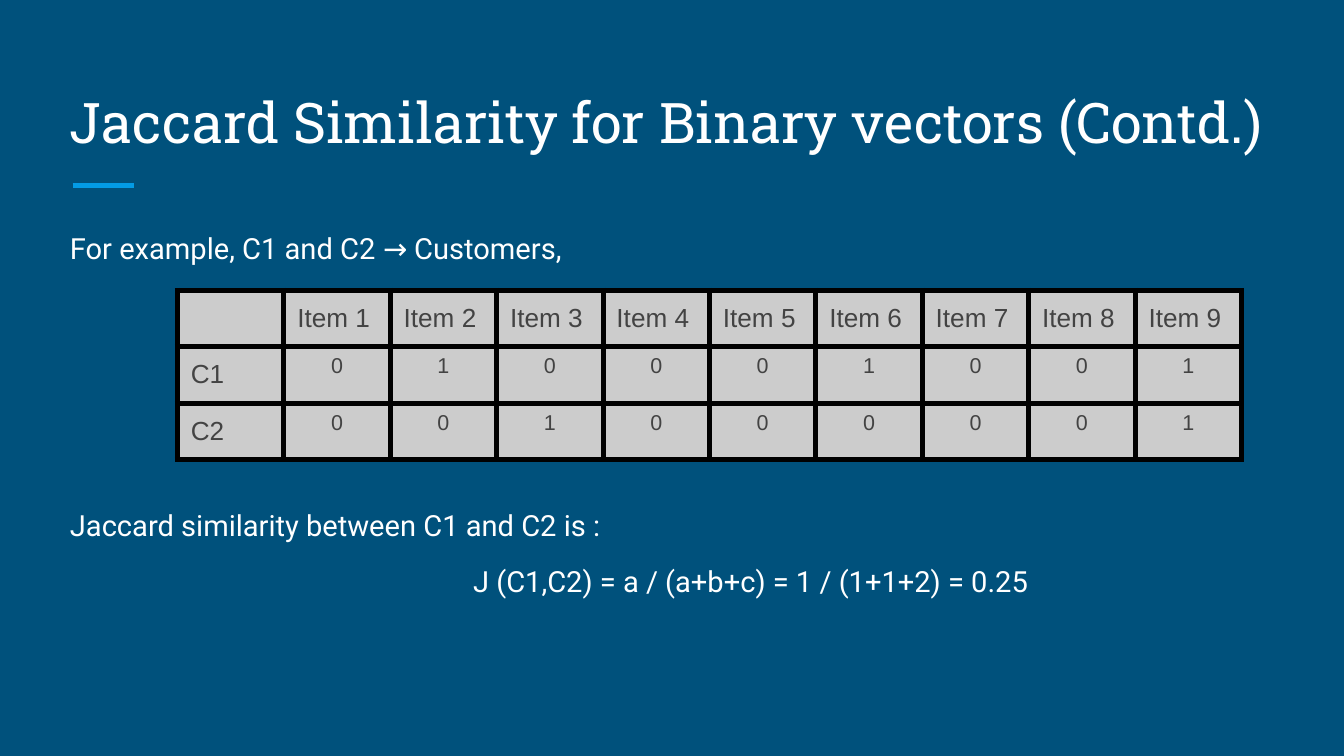
from lxml.etree import SubElement
from pptx import Presentation
from pptx.dml.color import RGBColor
from pptx.enum.text import MSO_ANCHOR, MSO_AUTO_SIZE, PP_ALIGN
from pptx.oxml.ns import qn
from pptx.util import Inches, Pt

# Content
TITLE = "Jaccard Similarity for Binary vectors (Contd.)"
# text, space before (pt), left indent (in)
LINES = [
    ("For example, C1 and C2 → Customers,", 0, 0),
    ("Jaccard similarity between C1 and C2 is :", 131, 0),
    ("J (C1,C2) = a / (a+b+c) = 1 / (1+1+2) = 0.25", 12, 3),
]
BUYS = {"C1": "010001001", "C2": "001000001"}
ITEMS = [f"Item {n}" for n in range(1, 10)]
ROWS = [["", *ITEMS]] + [[name, *bits] for name, bits in BUYS.items()]

# Theme
THEME = {
    "back": "00517C", "accent": "039BE5", "cell": "CCCCCC", "edge": "000000",
    "title": {"name": "Roboto Slab", "size": Pt(30), "color": "FFFFFF"},
    "body": {"name": "Roboto", "size": Pt(15.6), "color": "FFFFFF"},
    "label": {"name": "Arial", "size": Pt(14), "color": "434343"},
    "digit": {"name": "Arial", "size": Pt(11.5), "color": "434343"},
}
PAGE = 10
LEFT, WIDE = 0.42, 9.15
SPAN, ROW = 7.92, 0.42


def put(thing, **vals):
    for key, val in vals.items():
        setattr(thing, key, val)


def style(font, look):
    for key, val in THEME[look].items():
        if key == "color":
            font.color.rgb = RGBColor.from_string(val)
        else:
            setattr(font, key, val)


def pads(x, y):
    return {"margin_left": Inches(x), "margin_right": Inches(x),
            "margin_top": Inches(y), "margin_bottom": Inches(y)}


def place(shape, top, high, anchor):
    put(shape, left=Inches(LEFT), top=Inches(top),
        width=Inches(WIDE), height=Inches(high))
    put(shape.text_frame, word_wrap=True, auto_size=MSO_AUTO_SIZE.NONE,
        vertical_anchor=anchor, **pads(0.1, 0.1))


def edge(cell):
    props = cell._tc.get_or_add_tcPr()
    for side in ("lnL", "lnR", "lnT", "lnB"):
        line = SubElement(props, qn(f"a:{side}"), w=str(Pt(3)))
        fill = SubElement(line, qn("a:solidFill"))
        SubElement(fill, qn("a:srgbClr"), val=THEME["edge"])


# Widescreen page, 16:9
deck = Presentation()
put(deck, slide_width=Inches(PAGE), slide_height=Inches(PAGE * 9 / 16))
slide = deck.slides.add_slide(deck.slide_layouts[1])
back = slide.background.fill
back.solid()
back.fore_color.rgb = RGBColor.from_string(THEME["back"])

# Accent rule
rule = slide.shapes.add_connector(1, Inches(0.54), Inches(1.38), Inches(1), Inches(1.38))
rule.line.width = Pt(3)
rule.line.color.rgb = RGBColor.from_string(THEME["accent"])
SubElement(rule._element.spPr, qn("a:effectLst"))

# Title
title, body = slide.placeholders
place(title, 0.5, 0.75, MSO_ANCHOR.BOTTOM)
title.text_frame.text = TITLE
para = title.text_frame.paragraphs[0]
para.alignment = PP_ALIGN.LEFT
style(para.runs[0].font, "title")

# Body lines
place(body, 1.63, 3.84, MSO_ANCHOR.TOP)
body.text_frame.text = "\n".join(text for text, _, _ in LINES)
for para, (_, gap, left) in zip(body.text_frame.paragraphs, LINES):
    put(para, line_spacing=0.95, space_before=Pt(gap), alignment=PP_ALIGN.LEFT)
    props = para._p.get_or_add_pPr()
    props.set("marL", str(Inches(left)))
    props.set("indent", "0")
    SubElement(props, qn("a:buNone"))
    style(para.runs[0].font, "body")

# Purchase table
rows, cols = len(ROWS), len(ROWS[0])
grid = slide.shapes.add_table(rows, cols, Inches(1.32), Inches(2.16),
                              Inches(SPAN), Inches(ROW * rows)).table
put(grid, first_row=False, horz_banding=False)
for col in grid.columns:
    col.width = Inches(SPAN / cols)
for r, row in enumerate(ROWS):
    grid.rows[r].height = Inches(ROW)
    for c, text in enumerate(row):
        cell = grid.cell(r, c)
        edge(cell)
        cell.fill.solid()
        cell.fill.fore_color.rgb = RGBColor.from_string(THEME["cell"])
        if not text:
            continue
        cell.text = text
        para = cell.text_frame.paragraphs[0]
        digit = r > 0 and c > 0
        put(cell, **(pads(0.21, 0.05) if digit else pads(0.1, 0.1)))
        if digit:
            put(para, alignment=PP_ALIGN.CENTER, line_spacing=1.04)
        style(para.runs[0].font, "digit" if digit else "label")

deck.save("out.pptx")
